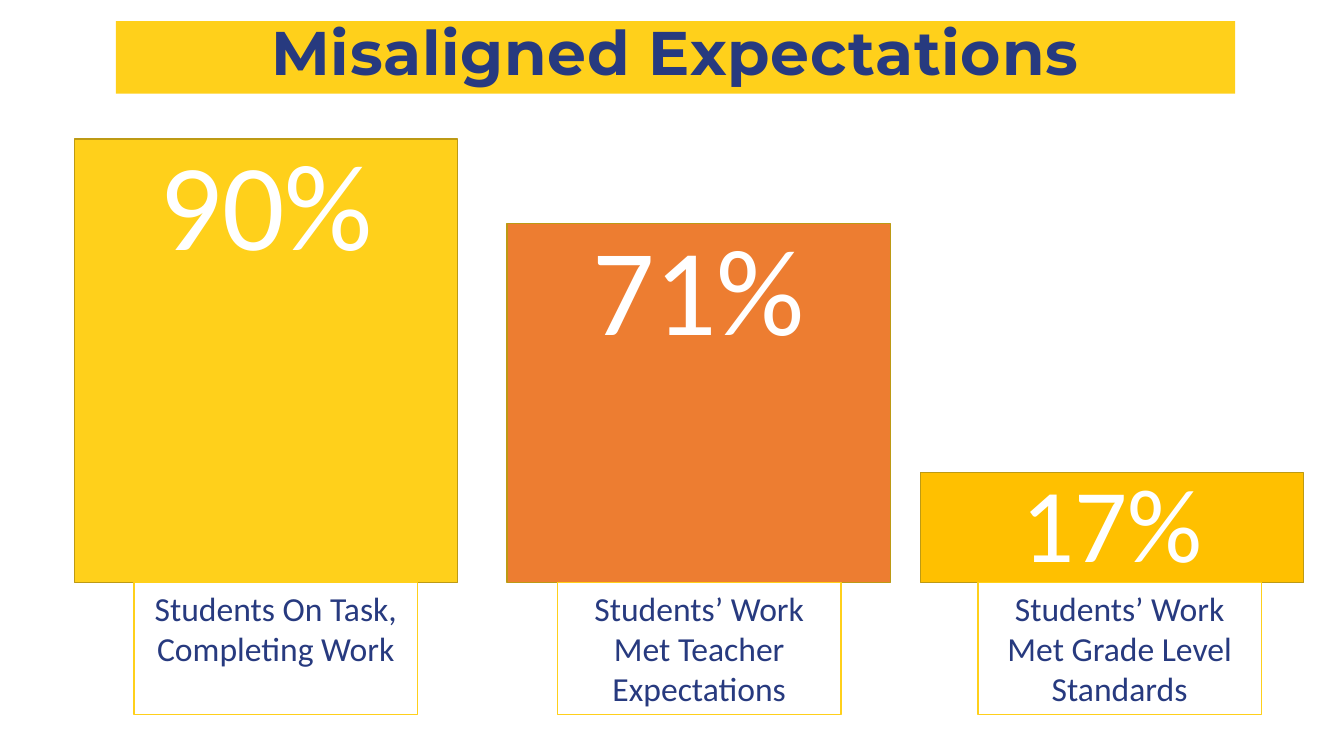
from dataclasses import dataclass

from pptx import Presentation
from pptx.dml.color import RGBColor
from pptx.enum.shapes import MSO_SHAPE as SHAPE
from pptx.enum.text import MSO_ANCHOR as ANCHOR, PP_ALIGN as ALIGN
from pptx.util import Inches, Pt


@dataclass(frozen=True)
class Theme:
    """Colours, fonts and type sizes of the slide."""
    yellow: str = "FFD01B"
    orange: str = "ED7D31"
    amber: str = "FFC000"
    edge: str = "BD9A14"
    navy: str = "273A7F"
    white: str = "FFFFFF"
    body: str = "Calibri"
    heading: str = "Montserrat"
    title_size: float = 44
    value_size: float = 88
    short_value_size: float = 74.8
    label_size: float = 24


THEME = Theme()
BASELINE = 5.78
BAR_WIDTH = 3.8
LABEL_WIDTH, LABEL_HEIGHT = 2.81, 1.31


def add_box(slide, box, fill, line=None):
    """Add a plain rectangle with an optional outline."""
    sp = slide.shapes.add_shape(SHAPE.RECTANGLE, *map(Inches, box))
    sp.shadow.inherit = False
    sp.fill.solid()
    sp.fill.fore_color.rgb = RGBColor.from_string(fill)
    if line:
        sp.line.color.rgb = RGBColor.from_string(line)
        sp.line.width = Pt(1)
    else:
        sp.line.fill.background()
    return sp


def write(sp, text, color, spacing=1.0, anchor=ANCHOR.TOP, **font):
    """Put one centred paragraph in a shape."""
    tf = sp.text_frame
    tf.word_wrap = True
    tf.vertical_anchor = anchor
    p = tf.paragraphs[0]
    p.alignment = ALIGN.CENTER
    p.line_spacing = spacing
    r = p.add_run()
    r.text = text
    r.font.color.rgb = RGBColor.from_string(color)
    for name, value in font.items():
        setattr(r.font, name, value)
    return r


def add_title(slide, text):
    """Add the heading band."""
    sp = add_box(slide, (1.15, 0.21, 11.1, 0.72), THEME.yellow)
    r = write(sp, text, THEME.navy, 0.8, ANCHOR.MIDDLE, name=THEME.heading,
              size=Pt(THEME.title_size), bold=True)
    r.font._element.set("spc", "50")


def add_bar(slide, left, height, value, fill):
    """Add a bar standing on the baseline with its value inside."""
    sp = add_box(slide, (left, BASELINE - height, BAR_WIDTH, height), fill, THEME.edge)
    short = height < 2
    size = THEME.short_value_size if short else THEME.value_size
    write(sp, value, THEME.white, 0.7 if short else 0.9,
          ANCHOR.MIDDLE if short else ANCHOR.TOP, name=THEME.body, size=Pt(size))
    if short:
        sp.text_frame.margin_top = Inches(0.22)


def add_label(slide, left, text):
    """Add the outlined caption below a bar."""
    sp = add_box(slide, (left, BASELINE, LABEL_WIDTH, LABEL_HEIGHT), THEME.white, THEME.yellow)
    write(sp, text, THEME.navy, name=THEME.body, size=Pt(THEME.label_size))


def main():
    """Build and save the slide."""
    prs = Presentation()
    prs.slide_width, prs.slide_height = Inches(13.33), Inches(7.5)
    slide = prs.slides.add_slide(prs.slide_layouts[6])
    bars = [
        (0.74, 4.4, "90%", THEME.yellow, 1.33, "Students On Task, Completing Work"),
        (5.03, 3.56, "71%", THEME.orange, 5.53, "Students’ Work Met Teacher Expectations"),
        (9.13, 1.09, "17%", THEME.amber, 9.7, "Students’ Work Met Grade Level Standards"),
    ]
    for left, height, value, fill, label_left, label in bars:
        add_bar(slide, left, height, value, fill)
        add_label(slide, label_left, label)
    add_title(slide, "Misaligned Expectations")
    prs.save("out.pptx")


if __name__ == "__main__":
    main()
